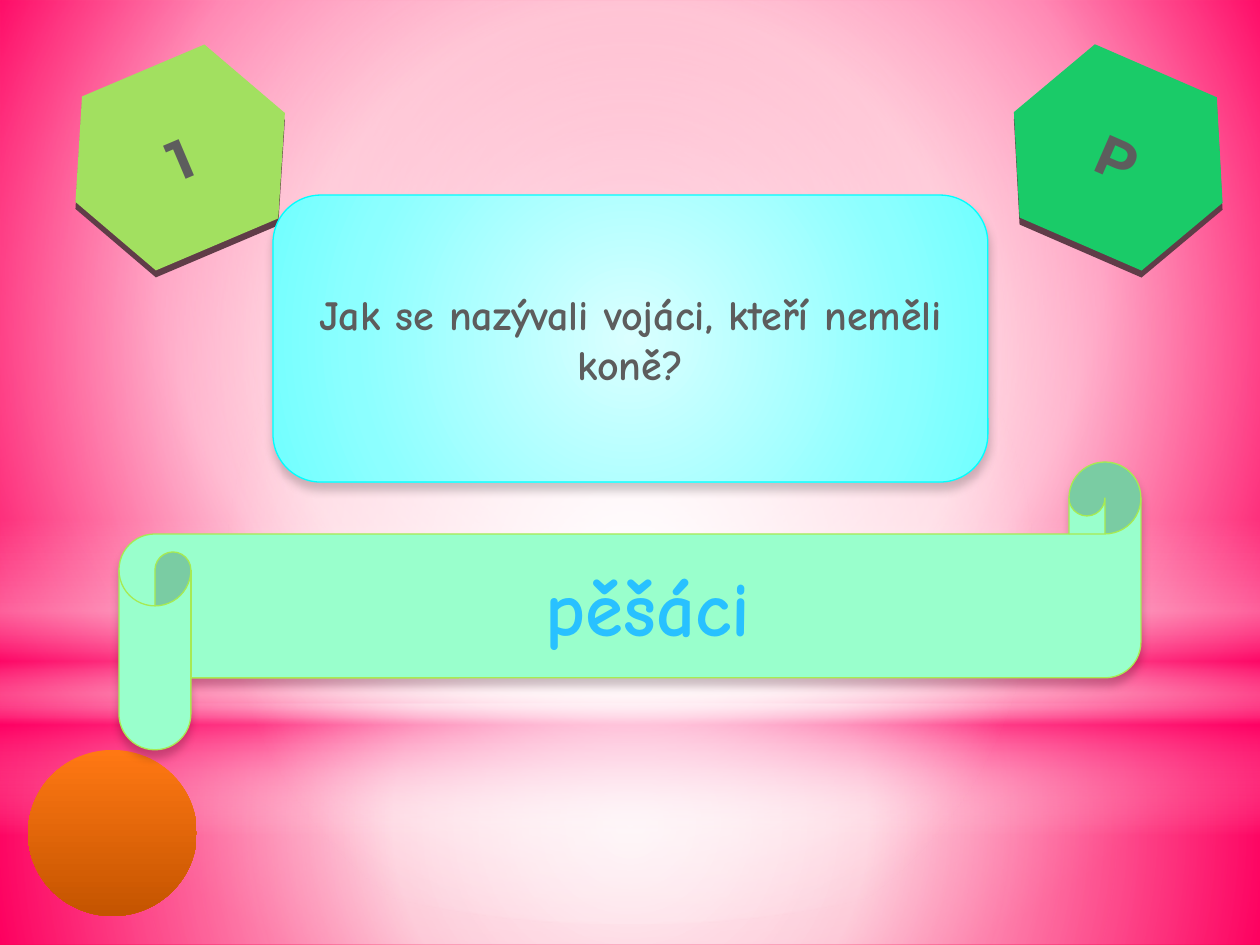
"""Build a quiz slide with a question card, an answer scroll and two hexagon badges."""
from dataclasses import dataclass

from lxml.etree import SubElement
from pptx import Presentation
from pptx.dml.color import RGBColor
from pptx.enum.shapes import MSO_SHAPE as Preset
from pptx.enum.text import MSO_ANCHOR as Anchor, PP_ALIGN as Align
from pptx.oxml.ns import qn
from pptx.util import Pt


@dataclass(frozen=True)
class Theme:
    """Colours, gradients, fonts and type sizes."""
    ink: str = "5D5D5D"
    answer: str = "28C1FF"
    green: str = "1ACB68"
    lime: str = "A2E060"
    edge: str = "603C48"
    mint: str = "99FFCC"
    mint_line: str = "A7EA52"
    cyan: str = "00FFFF"
    backdrop: tuple = ((0, "FF2163", 100), (60, "FFA7BD", 100), (100, "F80045", 100))
    floor: tuple = ((0, "FFFFFF", 91), (37, "FFFFFF", 76), (100, "FF0066", 79))
    wall: tuple = ((0, "FFFFFF", 89), (48, "FFFFFF", 62), (100, "FF0066", 79))
    horizon: tuple = ((0, "FFFFFF", 0), (29, "FFFFFF", 30), (45, "FF0066", 40),
                      (55, "FFFFFF", 26), (65, "FF0066", 60), (100, "FFFFFF", 0))
    glow: tuple = ((0, "FFFFFF", 100), (56, "FFFFFF", 0))
    card: tuple = ((0, "DAFFFF", 100), (72, "8CFFFF", 100), (100, "70FFFF", 100))
    orange: tuple = ((0, "FF7813", 100), (100, "C45400", 100))
    badge_font: str = "Montserrat"
    body_font: str = "Comic Neue"
    badge_size: int = 32
    question_size: int = 24
    answer_size: int = 44


class SlideBuilder:
    """Holds the theme and the current slide and draws its elements."""

    def __init__(self, slide, theme):
        self.slide = slide
        self.theme = theme

    def color(self, parent, value, alpha):
        """Append an RGB colour with opacity in percent."""
        color = SubElement(parent, qn("a:srgbClr"), val=value)
        if alpha < 100:
            SubElement(color, qn("a:alpha"), val=str(alpha * 1000))

    def gradient(self, properties, stops, focus):
        """Turn a solid fill into a circular gradient, or a vertical one without focus."""
        solid = properties.find(qn("a:solidFill"))
        gradient = SubElement(properties, qn("a:gradFill"), rotWithShape="1")
        stop_list = SubElement(gradient, qn("a:gsLst"))
        for position, value, alpha in stops:
            stop = SubElement(stop_list, qn("a:gs"), pos=str(position * 1000))
            self.color(stop, value, alpha)
        if focus:
            circle = SubElement(gradient, qn("a:path"), path="circle")
            sides = {side: str(share * 1000) for side, share in zip("ltrb", focus)}
            SubElement(circle, qn("a:fillToRect"), **sides)
        else:
            SubElement(gradient, qn("a:lin"), ang="5400000", scaled="0")
        properties.replace(solid, gradient)

    def background(self, stops, focus):
        """Fill the slide background with a gradient."""
        self.slide.background.fill.solid()
        properties = next(self.slide.element.iter(qn("p:bgPr")))
        self.gradient(properties, stops, focus)

    def shape(self, preset, box, fill, focus=(50, 50, 50, 50), line=None):
        """Draw a preset shape with a plain or gradient fill."""
        shape = self.slide.shapes.add_shape(preset, *map(Pt, box))
        shape.shadow.inherit = False
        shape.fill.solid()
        if isinstance(fill, str):
            shape.fill.fore_color.rgb = RGBColor.from_string(fill)
        else:
            self.gradient(shape.element.spPr, fill, focus)
        if line:
            shape.line.color.rgb = RGBColor.from_string(line)
            shape.line.width = Pt(0.75)
        else:
            shape.line.fill.background()
        return shape

    def shadow(self, shape, value="000000", alpha=20, blur=5, distance=4):
        """Cast a shadow straight down."""
        effects = shape.element.spPr.find(qn("a:effectLst"))
        outer = SubElement(effects, qn("a:outerShdw"), blurRad=str(Pt(blur)),
                           dist=str(Pt(distance)), dir="5400000", rotWithShape="0")
        self.color(outer, value, alpha)

    def text(self, shape, wording, font, size, color):
        """Write bold centred text into a shape."""
        frame = shape.text_frame
        frame.text = wording
        frame.word_wrap = True
        frame.vertical_anchor = Anchor.MIDDLE
        paragraph = frame.paragraphs[0]
        paragraph.alignment = Align.CENTER
        for run in paragraph.runs:
            run.font.name = font
            run.font.size = Pt(size)
            run.font.bold = True
            run.font.color.rgb = RGBColor.from_string(color)

    def badge(self, left, rotation, fill, letter):
        """Draw a tilted hexagon with a hard lower edge."""
        theme = self.theme
        shape = self.shape(Preset.HEXAGON, (left, 36, 130, 108), fill)
        shape.rotation = rotation
        self.shadow(shape, theme.edge, alpha=100, blur=0)
        self.text(shape, letter, theme.badge_font, theme.badge_size, theme.ink)

    def panel(self, preset, box, fill, line, wording, size, color):
        """Draw an outlined shape with a soft shadow and text."""
        shape = self.shape(preset, box, fill, line=line)
        self.shadow(shape)
        self.text(shape, wording, self.theme.body_font, size, color)
        return shape


def main():
    """Build and save the presentation."""
    presentation = Presentation()
    presentation.slide_width, presentation.slide_height = Pt(720), Pt(540)
    slide = presentation.slides.add_slide(presentation.slide_layouts[6])
    theme = Theme()
    builder = SlideBuilder(slide, theme)

    builder.background(theme.backdrop, (20, 10, 20, 60))
    builder.shape(Preset.RECTANGLE, (0, 402, 720, 138), theme.floor)
    builder.shape(Preset.RECTANGLE, (0, 0, 720, 402), theme.wall)
    builder.shape(Preset.RECTANGLE, (0, 297, 720, 180), theme.horizon, focus=None)
    builder.shape(Preset.OVAL, (0, 126, 720, 402), theme.glow)

    builder.badge(574, 23.5, theme.green, "P")
    builder.badge(38, 337, theme.lime, "1")
    builder.panel(Preset.ROUNDED_RECTANGLE, (156, 111.5, 408.5, 164), theme.card, theme.cyan,
                  "Jak se nazývali vojáci, kteří neměli koně?", theme.question_size, theme.ink)
    builder.shape(Preset.OVAL, (16, 428.5, 96.5, 95), theme.orange, focus=None)
    scroll = builder.panel(Preset.HORIZONTAL_SCROLL, (68, 264, 584, 164.5), theme.mint,
                           theme.mint_line, "pěšáci", theme.answer_size, theme.answer)
    scroll.adjustments[0] = 0.25

    presentation.save("out.pptx")


if __name__ == "__main__":
    main()
